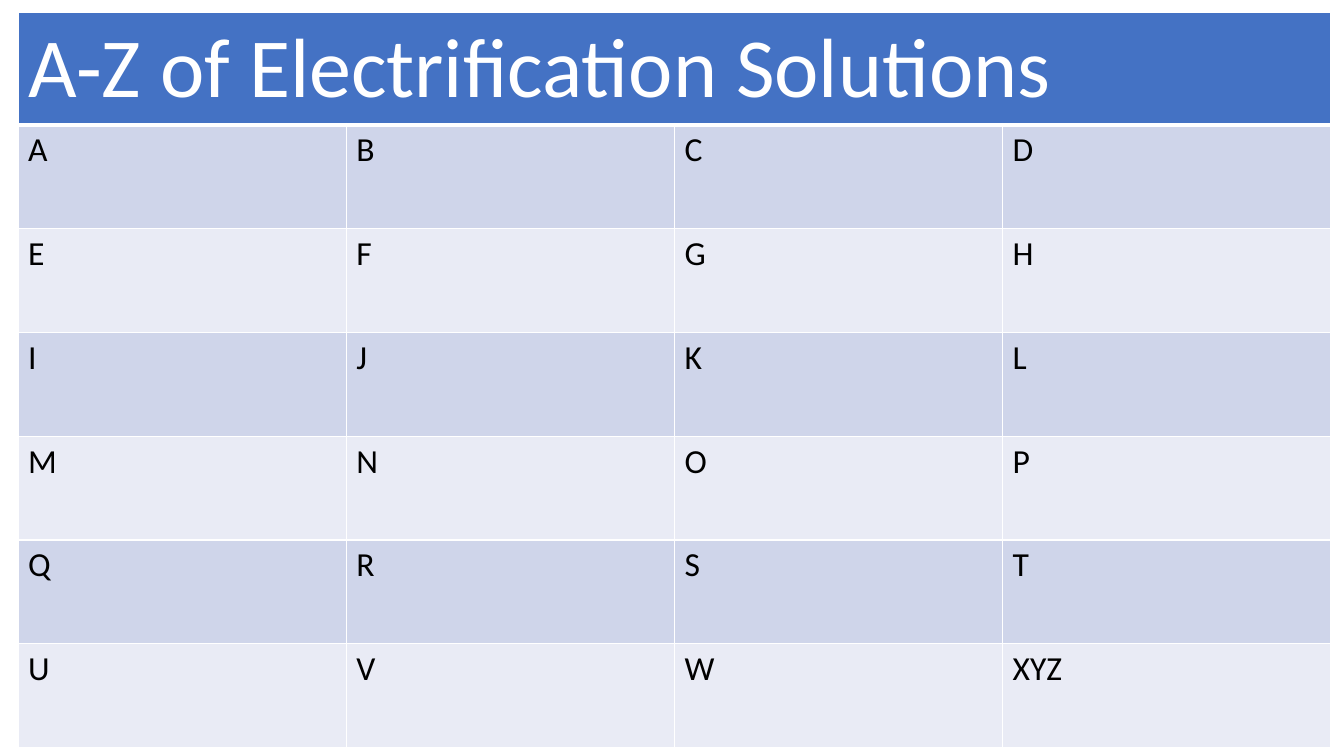
from dataclasses import dataclass

import pptx
import pptx.dml.color
import pptx.oxml
import pptx.oxml.ns
import pptx.util

HEADING = "A-Z of Electrification Solutions"
LETTER_ROWS = [
    ["A", "B", "C", "D"],
    ["E", "F", "G", "H"],
    ["I", "J", "K", "L"],
    ["M", "N", "O", "P"],
    ["Q", "R", "S", "T"],
    ["U", "V", "W", "XYZ"],
]


@dataclass(frozen=True)
class Theme:
    font: str = "Calibri"
    heading_size: int = 60
    letter_size: int = 24
    heading_text: str = "FFFFFF"
    letter_text: str = "000000"
    heading_fill: str = "4472C4"
    bands: tuple = ("CFD5EA", "E9EBF5")
    rule: str = "FFFFFF"
    thin: int = 1
    thick: int = 3


THEME = Theme()
SLIDE_WIDTH, SLIDE_HEIGHT = 13.33, 7.5
TABLE_LEFT, TABLE_TOP, TABLE_WIDTH = 0.18, 0.12, 13.02
HEADING_HEIGHT, LETTER_HEIGHT = 1.11, 1.03

Inches = pptx.util.Inches
color = pptx.dml.color.RGBColor.from_string


def draw_borders(cell, top, bottom):
    """Rule all four sides of a cell; widths are in points."""
    properties = cell._tc.get_or_add_tcPr()
    widths = {"lnL": THEME.thin, "lnR": THEME.thin, "lnT": top, "lnB": bottom}
    for side, width in widths.items():
        properties.append(pptx.oxml.parse_xml(
            f'<a:{side} {pptx.oxml.ns.nsdecls("a")} w="{pptx.util.Pt(width)}">'
            f'<a:solidFill><a:srgbClr val="{THEME.rule}"/></a:solidFill></a:{side}>'
        ))


def fill_cell(cell, text, size, text_color, fill):
    cell.text = text
    cell.fill.solid()
    cell.fill.fore_color.rgb = color(fill)
    font = cell.text_frame.paragraphs[0].font
    font.name = THEME.font
    font.size = pptx.util.Pt(size)
    font.bold = False
    font.color.rgb = color(text_color)


def add_letter_table(page):
    row_count, column_count = len(LETTER_ROWS) + 1, len(LETTER_ROWS[0])
    height = HEADING_HEIGHT + LETTER_HEIGHT * len(LETTER_ROWS)
    table = page.shapes.add_table(
        row_count, column_count, Inches(TABLE_LEFT), Inches(TABLE_TOP),
        Inches(TABLE_WIDTH), Inches(height),
    ).table
    for column in table.columns:
        column.width = Inches(TABLE_WIDTH / column_count)
    for index, row in enumerate(table.rows):
        row.height = Inches(LETTER_HEIGHT if index else HEADING_HEIGHT)
        for cell in row.cells:
            draw_borders(
                cell,
                top=THEME.thick if index == 1 else THEME.thin,
                bottom=THEME.thick if index == 0 else THEME.thin,
            )

    heading = table.cell(0, 0)
    heading.merge(table.cell(0, column_count - 1))
    fill_cell(heading, HEADING, THEME.heading_size, THEME.heading_text, THEME.heading_fill)
    for index, letters in enumerate(LETTER_ROWS):
        band = THEME.bands[index % len(THEME.bands)]
        for column, letter in enumerate(letters):
            fill_cell(table.cell(index + 1, column), letter,
                      THEME.letter_size, THEME.letter_text, band)


def main():
    deck = pptx.Presentation()
    deck.slide_width = Inches(SLIDE_WIDTH)
    deck.slide_height = Inches(SLIDE_HEIGHT)
    blank_layout = deck.slide_layouts[6]
    add_letter_table(deck.slides.add_slide(blank_layout))
    deck.save("out.pptx")


if __name__ == "__main__":
    main()
